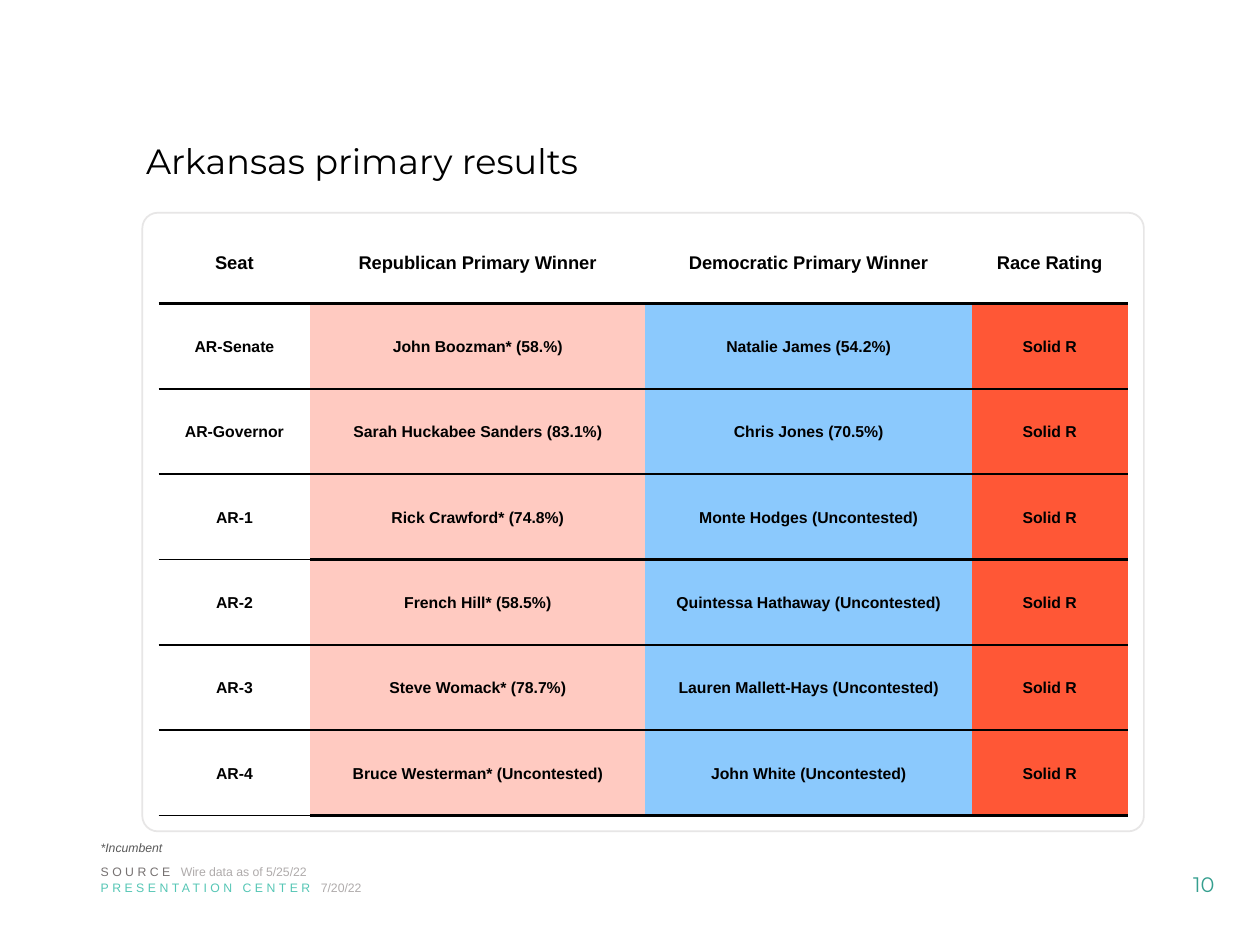
from typing import NamedTuple

from lxml import etree
from pptx import Presentation
from pptx.dml.color import RGBColor
from pptx.enum.shapes import MSO_SHAPE
from pptx.enum.text import MSO_ANCHOR, PP_ALIGN
from pptx.oxml.ns import qn
from pptx.util import Cm, Pt

ROUND = MSO_SHAPE.ROUNDED_RECTANGLE
MID, TOP = MSO_ANCHOR.MIDDLE, MSO_ANCHOR.TOP
LEFT, CENTER = PP_ALIGN.LEFT, PP_ALIGN.CENTER

BLACK = RGBColor(0x00, 0x00, 0x00)
WHITE = RGBColor(0xFF, 0xFF, 0xFF)
PINK = RGBColor(0xFF, 0xCA, 0xC1)
BLUE = RGBColor(0x8B, 0xC9, 0xFD)
RED = RGBColor(0xFF, 0x57, 0x36)
TEAL = RGBColor(0x55, 0xC6, 0xB5)
GREEN = RGBColor(0x35, 0x9F, 0x8F)
PALE = RGBColor(0xE7, 0xE6, 0xE6)
SILVER = RGBColor(0xAF, 0xAB, 0xAB)
GRAY = RGBColor(0x76, 0x71, 0x71)
DARK = RGBColor(0x59, 0x59, 0x59)


class Race(NamedTuple):
    seat: str
    rep: str
    dem: str
    rating: str = "Solid R"


class Column(NamedTuple):
    head: str
    width: float
    fill: RGBColor | None
    rule: float


class Note(NamedTuple):
    top: float
    label: str
    color: RGBColor
    value: str


COLUMNS = [
    Column("Seat", 3.05, None, 1),
    Column("Republican Primary Winner", 6.76, PINK, 1.5),
    Column("Democratic Primary Winner", 6.58, BLUE, 1.5),
    Column("Race Rating", 3.14, RED, 1.5),
]
RACES = [
    Race("AR-Senate", "John Boozman* (58.%)", "Natalie James (54.2%)"),
    Race("AR-Governor", "Sarah Huckabee Sanders (83.1%)", "Chris Jones (70.5%)"),
    Race("AR-1", "Rick Crawford* (74.8%)", "Monte Hodges (Uncontested)"),
    Race("AR-2", "French Hill* (58.5%)", "Quintessa Hathaway (Uncontested)"),
    Race("AR-3", "Steve Womack* (78.7%)", "Lauren Mallett-Hays (Uncontested)"),
    Race("AR-4", "Bruce Westerman* (Uncontested)", "John White (Uncontested)"),
]
NOTES = [
    Note(17.3, "SOURCE ", GRAY, "Wire data as of 5/25/22"),
    Note(17.63, "PRESENTATION CENTER ", TEAL, "7/20/22"),
]


def write(frame, text: str, *, size: float, color: RGBColor, font="Arial",
          bold=False, italic=False, align=LEFT, track=0) -> None:
    """Add a formatted run to the first paragraph of a text frame."""
    para = frame.paragraphs[0]
    para.alignment = align
    run = para.add_run()
    run.text = text
    run.font.name, run.font.size = font, Pt(size)
    run.font.bold, run.font.italic = bold, italic
    run.font.color.rgb = color
    if track:
        run._r.get_or_add_rPr().set("spc", str(track * 100))


def add_box(slide, left: float, top: float, width: float, height: float,
            anchor=TOP):
    box = slide.shapes.add_textbox(Cm(left), Cm(top), Cm(width), Cm(height))
    frame = box.text_frame
    frame.word_wrap = True
    frame.vertical_anchor = anchor
    return frame


def set_edge(cell, side: str, width: float) -> None:
    """Rule one side of a cell in black, or clear it at width 0."""
    line = etree.SubElement(cell._tc.get_or_add_tcPr(), qn(f"a:ln{side}"))
    if not width:
        etree.SubElement(line, qn("a:noFill"))
        return
    line.set("w", str(Pt(width)))
    fill = etree.SubElement(line, qn("a:solidFill"))
    etree.SubElement(fill, qn("a:srgbClr")).set("val", str(BLACK))


def fill_cell(cell, text: str, size: float, fill: RGBColor | None,
              above: float, below: float) -> None:
    cell.margin_left = cell.margin_right = cell.margin_top = Cm(0.03)
    cell.margin_bottom = 0
    cell.vertical_anchor = MID
    for side, width in (("L", 0), ("R", 0), ("T", above), ("B", below)):
        set_edge(cell, side, width)
    if fill is None:
        cell.fill.background()
    else:
        cell.fill.solid()
        cell.fill.fore_color.rgb = fill
    write(cell.text_frame, text, size=size, color=BLACK, bold=True, align=CENTER)


def add_results(slide) -> None:
    head, row = 1.65, 1.72
    wide = sum(col.width for col in COLUMNS)
    high = head + row * len(RACES)
    table = slide.shapes.add_table(len(RACES) + 1, len(COLUMNS), Cm(3.2),
                                   Cm(4.47), Cm(wide), Cm(high)).table
    table.first_row = table.horz_banding = False
    for i, line in enumerate(table.rows):
        line.height = Cm(row if i else head)
    for c, col in enumerate(COLUMNS):
        table.columns[c].width = Cm(col.width)
        fill_cell(table.cell(0, c), col.head, 10.5, None, 0, 1.5)
        for r, race in enumerate(RACES, 1):
            above = 1.5 if r == 1 else col.rule
            fill_cell(table.cell(r, c), race[c], 9, col.fill, above, col.rule)


def main() -> None:
    deck = Presentation()
    deck.slide_width, deck.slide_height = Cm(25.4), Cm(19.05)
    slide = deck.slides.add_slide(deck.slide_layouts[5])

    # Title
    title = slide.shapes.title
    title.left, title.top = Cm(2.69), Cm(2.29)
    title.width, title.height = Cm(20.4), Cm(2.01)
    title.text_frame.vertical_anchor = MID
    write(title.text_frame, "Arkansas primary results", size=20, color=BLACK,
          font="Montserrat")
    title.text_frame.paragraphs[0].line_spacing = 0.9

    # Card behind the table
    card = slide.shapes.add_shape(ROUND, Cm(2.87), Cm(4.29), Cm(20.19), Cm(12.47))
    card.adjustments[0] = 0.025
    card.shadow.inherit = False
    card.fill.solid()
    card.fill.fore_color.rgb = WHITE
    card.line.color.rgb = PALE
    card.line.width = Pt(1)

    add_results(slide)

    # Footnote, source lines and page number
    write(add_box(slide, 1.78, 16.81, 22.9, 0.56), "*Incumbent", size=7,
          color=DARK, italic=True)
    for note in NOTES:
        frame = add_box(slide, 1.78, note.top, 10.13, 0.56)
        write(frame, note.label, size=7, color=note.color, track=2)
        write(frame, note.value, size=7, color=SILVER)
    write(add_box(slide, 23.14, 17.32, 2.26, 1.02, MID), "10", size=12,
          color=GREEN, font="Montserrat", align=CENTER)

    deck.save("out.pptx")


if __name__ == "__main__":
    main()
